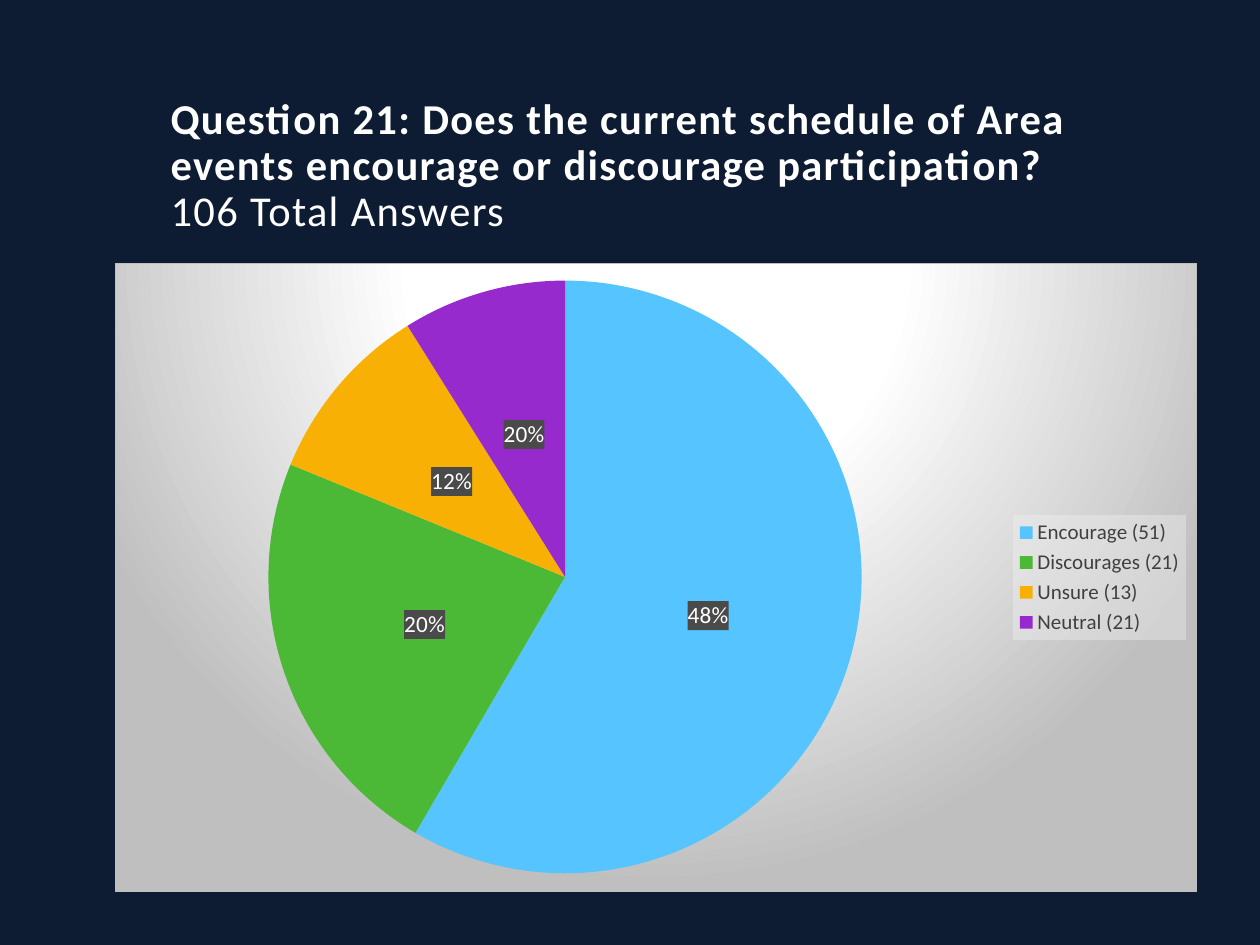
from lxml import etree
from pptx import Presentation, util as u
from pptx.chart.data import CategoryChartData
from pptx.dml.color import RGBColor
from pptx.enum import chart as ch, text
from pptx.oxml import parse_xml
from pptx.oxml.ns import nsdecls, qn

# Content
QUESTION = "Question 21: Does the current schedule of Area events encourage or discourage participation?"
TOTAL = "106 Total Answers"
ANSWERS = [  # category, value, label, colour
    ("Encourage (51)", 59, "48%", "blue"),
    ("Discourages (21)", 23, "20%", "green"),
    ("Unsure (13)", 10, "12%", "amber"),
    ("Neutral (21)", 9, "20%", "purple"),
]
COLORS = {
    "back": "0D1C32", "white": "FFFFFF", "grey": "BFBFBF", "dark": "404040",
    "label": "4A4A4A", "legend": "F2F2F2",
    "blue": "56C5FF", "green": "4BB836", "amber": "F8B004", "purple": "972ACD",
}
FONT = "Calibri"
TITLE_BOX = (158, 53, 945, 189)
CHART_BOX = (115, 263, 1082, 629)
PIE_BOX = (268, 280, 594, 594)


def px(n):
    return u.Emu(n * 914400 // 126)


def rgb(name):
    return RGBColor.from_string(COLORS[name])


def style(font, size, color, bold=False):
    font.name, font.size, font.bold = FONT, u.Pt(size), bold
    font.color.rgb = rgb(color)


def solid(color, alpha=100):
    return (f'<a:solidFill><a:srgbClr val="{COLORS[color]}">'
            f'<a:alpha val="{alpha * 1000}"/></a:srgbClr></a:solidFill>')


def add_sp_pr(after, fill):
    after.addnext(parse_xml(f'<c:spPr {nsdecls("c", "a")}>{fill}</c:spPr>'))


prs = Presentation()
prs.slide_width, prs.slide_height = px(1260), px(945)
s = prs.slides.add_slide(prs.slide_layouts[5])
s.background.fill.solid()
s.background.fill.fore_color.rgb = rgb("back")

# Title
title = s.shapes.title
title.left, title.top, title.width, title.height = map(px, TITLE_BOX)
tf = title.text_frame
tf.word_wrap = True
tf.auto_size = text.MSO_AUTO_SIZE.NONE
tf.vertical_anchor = text.MSO_ANCHOR.BOTTOM
p = tf.paragraphs[0]
p.alignment = text.PP_ALIGN.LEFT
p.line_spacing = 0.9
for i, line in enumerate((QUESTION, TOTAL)):
    if i:
        p.add_line_break()
    r = p.add_run()
    r.text = line
    style(r.font, 24.3, "white", bold=i == 0)
    r.font._element.set("spc", "80")

# Pie chart
data = CategoryChartData()
data.categories = [a[0] for a in ANSWERS]
data.add_series("Series 1", [a[1] for a in ANSWERS])
chart = s.shapes.add_chart(ch.XL_CHART_TYPE.PIE, *map(px, CHART_BOX), data).chart
chart.has_title = False
style(chart.font, 10, "white")
plot = chart.plots[0]
plot.vary_by_categories = True

# Slices and their labels
for i, (_, _, label, color) in enumerate(ANSWERS):
    point = plot.series[0].points[i]
    point.format.fill.solid()
    point.format.fill.fore_color.rgb = rgb(color)
    point.format.line.fill.background()
    tf = point.data_label.text_frame
    tf.text = label
    style(tf.paragraphs[0].runs[0].font, 13.3, "white")
    point.data_label.position = ch.XL_LABEL_POSITION.CENTER
    rich = tf._txBody
    add_sp_pr(rich.getparent(), solid("label"))

# Legend
chart.has_legend = True
legend = chart.legend
legend.position = ch.XL_LEGEND_POSITION.RIGHT
legend.include_in_layout = False
style(legend.font, 12, "dark")
add_sp_pr(legend._element.find(qn("c:overlay")), solid("legend", 39))

# Chart area: round gradient and thin border
stops = "".join(f'<a:gs pos="{pos * 1000}"><a:srgbClr val="{COLORS[c]}"/></a:gs>'
                for pos, c in ((0, "white"), (39, "white"), (100, "grey")))
chart_el = chart._chartSpace.find(qn("c:chart"))
add_sp_pr(chart_el, f'<a:gradFill><a:gsLst>{stops}</a:gsLst><a:path path="circle">'
          '<a:fillToRect l="50000" t="-80000" r="50000" b="180000"/></a:path></a:gradFill>'
          f'<a:ln w="9525">{solid("grey")}</a:ln>')

# Plot area position, as fractions of the chart
area = chart_el.find(qn("c:plotArea"))
for old in area.findall(qn("c:layout")):
    area.remove(old)
layout = etree.Element(qn("c:layout"))
manual = etree.SubElement(layout, qn("c:manualLayout"))
(cx, cy, cw, chh), (x, y, w, h) = CHART_BOX, PIE_BOX
for tag, val in (("layoutTarget", "inner"), ("xMode", "edge"), ("yMode", "edge"),
                 ("x", (x - cx) / cw), ("y", (y - cy) / chh), ("w", w / cw), ("h", h / chh)):
    etree.SubElement(manual, qn("c:" + tag)).set("val", str(val))
area.insert(0, layout)

prs.save("out.pptx")
